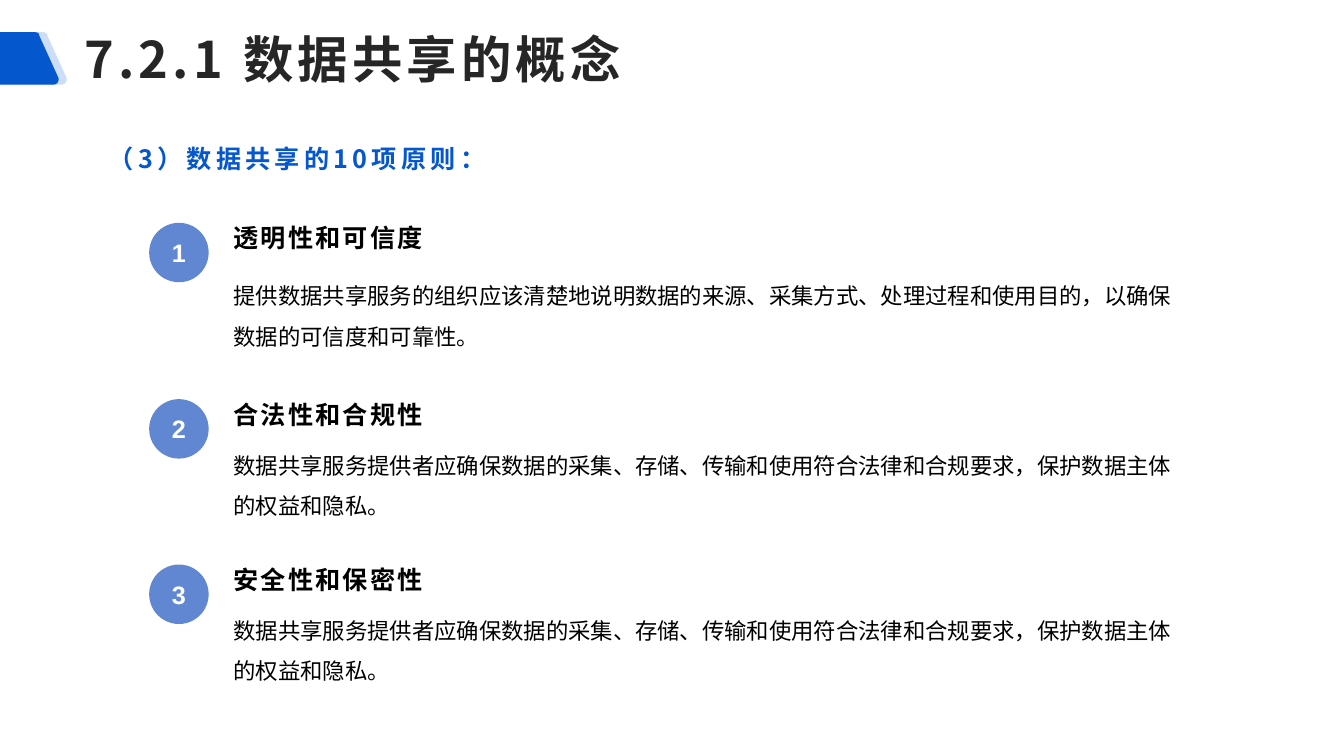
from lxml.etree import SubElement
from pptx import Presentation
from pptx.dml.color import RGBColor
from pptx.enum.shapes import MSO_SHAPE
from pptx.enum.text import MSO_ANCHOR as ANCHOR, MSO_AUTO_SIZE as AUTO_SIZE, PP_ALIGN as ALIGN
from pptx.oxml.ns import qn
from pptx.util import Inches, Pt

WIDTH, HEIGHT = Inches(13.333), Inches(7.5)
CJK = "Noto Sans CJK SC"
COLORS = {"blue": "0557CD", "badge": "4874CB", "heading": "262626",
          "text": "000000", "white": "FFFFFF"}
BADGE_LEFT, TEXT_LEFT = 11.1, 16.65
BLADE_SIZE = 6.23, 6.93
BLADE_CORNERS = [
    [(23, 6), (24, 2), (25, 0), (28, 0)],
    [(72, 0), (75, 0), (77, 2), (77, 6)],
    [(100, 87), (101, 92), (99, 100), (94, 100)],
    [(6, 100), (1, 100), (-1, 92), (0, 87)],
]
LEGAL_DUTY = "数据共享服务提供者应确保数据的采集、存储、传输和使用符合法律和合规要求，保护数据主体的权益和隐私。"
PRINCIPLES = [
    (29.47, 5.46, "透明性和可信度",
     "提供数据共享服务的组织应该清楚地说明数据的来源、采集方式、处理过程和使用目的，以确保数据的可信度和可靠性。"),
    (52.8, 4.53, "合法性和合规性", LEGAL_DUTY),
    (74.67, 4.53, "安全性和保密性", LEGAL_DUTY),
]


def share(left, top, width, height):
    """Turn percentages of the slide into lengths."""
    return [int(WIDTH * left / 100), int(HEIGHT * top / 100),
            int(WIDTH * width / 100), int(HEIGHT * height / 100)]


def paint(shape, color, opacity):
    """Fill a shape with a partly opaque colour and no outline."""
    shape.shadow.inherit = False
    shape.fill.solid()
    shape.fill.fore_color.rgb = RGBColor.from_string(COLORS[color])
    shape.line.fill.background()
    tint = shape._element.spPr.find(qn("a:solidFill"))[0]
    SubElement(tint, qn("a:alpha")).set("val", str(opacity * 1000))


def write(shape, words, size, color, latin="Arial", bold=True, tracking=0,
          spacing=None, align=ALIGN.LEFT, anchor=ANCHOR.MIDDLE):
    """Write one formatted run into a shape."""
    frame = shape.text_frame
    frame.word_wrap = True
    frame.auto_size = AUTO_SIZE.NONE
    frame.vertical_anchor = anchor
    line = frame.paragraphs[0]
    line.alignment = align
    if spacing:
        line.line_spacing = spacing
    run = line.add_run()
    run.text = words
    run.font.size = Pt(size)
    run.font.bold = bold
    run.font.name = latin
    run.font.color.rgb = RGBColor.from_string(COLORS[color])
    properties = run._r.get_or_add_rPr()
    properties.set("spc", str(int(tracking * 100)))
    SubElement(properties, qn("a:ea")).set("typeface", CJK)


def curve(corner, steps=8):
    """Return points along a cubic corner."""
    for step in range(steps + 1):
        t = step / steps
        weights = (1 - t) ** 3, 3 * t * (1 - t) ** 2, 3 * t * t * (1 - t), t ** 3
        yield [sum(w * point[axis] for w, point in zip(weights, corner)) for axis in (0, 1)]


def add_blade(slide, left, opacity):
    """Add a slanted, rounded blade at the slide's edge."""
    x, y, width, height = share(left, 4.27, *BLADE_SIZE)
    outline = [(x + width * px / 100, y + height * py / 100)
               for corner in BLADE_CORNERS for px, py in curve(corner)]
    builder = slide.shapes.build_freeform(*outline[0], scale=1.0)
    builder.add_line_segments(outline[1:], close=True)
    paint(builder.convert_to_shape(), "blue", opacity)


def add_principle(slide, number, top, detail_gap, name, detail):
    """Add a numbered principle with its explanation."""
    badge = slide.shapes.add_shape(MSO_SHAPE.OVAL, *share(BADGE_LEFT, top, 4.43, 7.87))
    paint(badge, "badge", 86)
    write(badge, str(number), 18, "white", align=ALIGN.CENTER)

    label = slide.shapes.add_textbox(*share(TEXT_LEFT, top - 1.5, 19.58, 5.2))
    label.text_frame.margin_right = 0
    write(label, name, 18, "text", tracking=1.5, spacing=1.2, anchor=ANCHOR.TOP)

    explanation = slide.shapes.add_textbox(*share(TEXT_LEFT, top + detail_gap, 72.38, 13.6))
    write(explanation, detail, 16, "text", bold=False, spacing=1.5, anchor=ANCHOR.TOP)


def main():
    """Build the slide on data sharing principles."""
    deck = Presentation()
    deck.slide_width, deck.slide_height = WIDTH, HEIGHT
    slide = deck.slides.add_slide(deck.slide_layouts[5])
    add_blade(slide, -1.28, 20)
    add_blade(slide, -1.88, 100)

    topic = slide.shapes.title
    topic.left, topic.top, topic.width, topic.height = share(7.35, 14.27, 94.43, 13.33)
    write(topic, "（3）数据共享的10项原则：", 18, "blue", latin=CJK, tracking=3)

    section = slide.shapes.add_textbox(*share(5.55, 1.07, 94.43, 13.33))
    write(section, "7.2.1 数据共享的概念", 36, "heading", latin=CJK, tracking=3)

    for number, principle in enumerate(PRINCIPLES, 1):
        add_principle(slide, number, *principle)
    deck.save("out.pptx")


if __name__ == "__main__":
    main()
